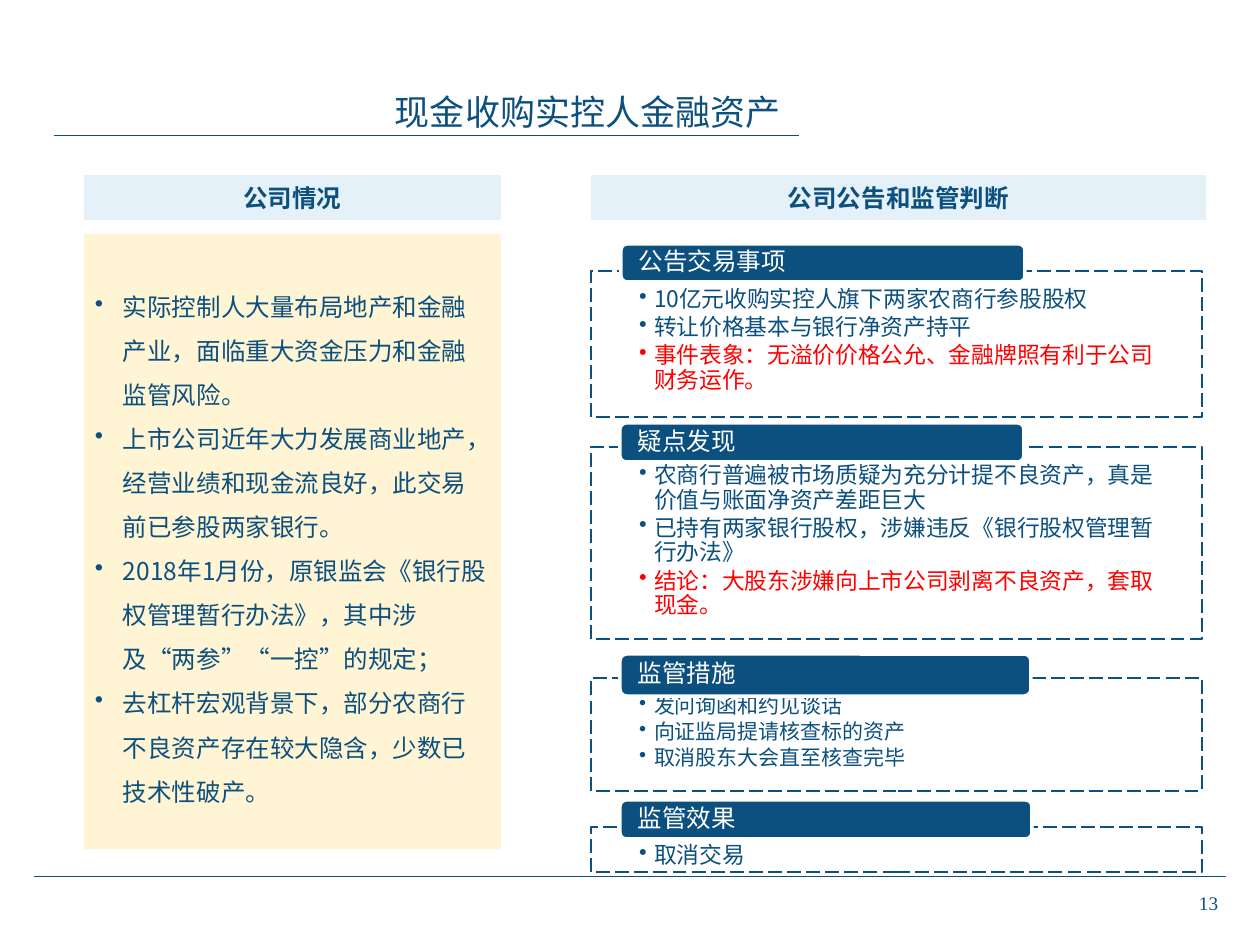
from lxml import etree
from pptx import Presentation, util as u
from pptx.dml.color import RGBColor
from pptx.enum import dml, shapes, text
from pptx.oxml import ns

SCALE = u.Inches(10) / 1260
NAVY = RGBColor(0x0C, 0x50, 0x7F)
RED = RGBColor(0xFF, 0, 0)
WHITE = RGBColor(0xFF, 0xFF, 0xFF)
PALE_BLUE = RGBColor(0xE5, 0xF1, 0xF9)
CREAM = RGBColor(0xFF, 0xF4, 0xD3)
CJK = "Noto Sans CJK SC"
SERIF = "Times New Roman"

COMPANY_FACTS = [
    "实际控制人大量布局地产和金融产业，面临重大资金压力和金融监管风险。",
    "上市公司近年大力发展商业地产，经营业绩和现金流良好，此交易前已参股两家银行。",
    "2018年1月份，原银监会《银行股权管理暂行办法》，其中涉及“两参”“一控”的规定；",
    "去杠杆宏观背景下，部分农商行不良资产存在较大隐含，少数已技术性破产。",
]
SECTIONS = [
    ("公告交易事项", (621, 244, 404, 38), (591, 271, 611, 146), 13, [
        ("10亿元收购实控人旗下两家农商行参股股权", NAVY),
        ("转让价格基本与银行净资产持平", NAVY),
        ("事件表象：无溢价价格公允、金融牌照有利于公司财务运作。", RED)]),
    ("疑点发现", (620, 423, 404, 39), (591, 447, 611, 192), 13, [
        ("农商行普遍被市场质疑为充分计提不良资产，真是价值与账面净资产差距巨大", NAVY),
        ("已持有两家银行股权，涉嫌违反《银行股权管理暂行办法》", NAVY),
        ("结论：大股东涉嫌向上市公司剥离不良资产，套取现金。", RED)]),
    ("监管措施", (620, 654, 411, 42), (591, 678, 611, 113), 12, [
        ("发问询函和约见谈话", NAVY),
        ("向证监局提请核查标的资产", NAVY),
        ("取消股东大会直至核查完毕", NAVY)]),
    ("监管效果", (620, 800, 412, 39), (591, 827, 611, 45), 13, [
        ("取消交易", NAVY)]),
]


def px(value):
    return u.Emu(round(value * SCALE))


def add_rule(slide, left, right, top):
    line = slide.shapes.add_connector(
        shapes.MSO_CONNECTOR.STRAIGHT, px(left), px(top), px(right), px(top))
    line.line.color.rgb = NAVY
    line.line.width = u.Pt(0.5)
    etree.SubElement(line._element.spPr, ns.qn("a:effectLst"))


def add_panel(slide, box, fill, kind=shapes.MSO_SHAPE.RECTANGLE):
    shape = slide.shapes.add_shape(kind, *map(px, box))
    shape.shadow.inherit = False
    shape.fill.solid()
    shape.fill.fore_color.rgb = fill
    shape.line.fill.background()
    return shape


def set_frame(frame, margins, anchor=text.MSO_ANCHOR.MIDDLE):
    frame.word_wrap = True
    frame.vertical_anchor = anchor
    (frame.margin_left, frame.margin_top,
     frame.margin_right, frame.margin_bottom) = map(px, margins)


def style_paragraph(paragraph, size, color, font=CJK, bold=False,
                    align=text.PP_ALIGN.LEFT):
    paragraph.alignment = align
    for run in paragraph.runs:
        run.font.name = font
        run.font.size = u.Pt(size)
        run.font.bold = bold
        run.font.color.rgb = color
        east_asian = etree.SubElement(run._r.get_or_add_rPr(), ns.qn("a:ea"))
        east_asian.set("typeface", font)


def fill_bullets(frame, items, size, indent, line_spacing, space_after=0):
    frame.text = "\n".join(words for words, color in items)
    for paragraph, (words, color) in zip(frame.paragraphs, items):
        properties = paragraph._p.get_or_add_pPr()
        properties.set("marL", str(px(indent)))
        properties.set("indent", str(-px(indent)))
        bullet = etree.SubElement(properties, ns.qn("a:buChar"))
        bullet.set("char", "•")
        paragraph.line_spacing = line_spacing
        paragraph.space_after = u.Pt(space_after)
        style_paragraph(paragraph, size, color)


def add_label(slide, box, words, size, font=CJK):
    frame = slide.shapes.add_textbox(*map(px, box)).text_frame
    set_frame(frame, (13, 6, 13, 6), text.MSO_ANCHOR.TOP)
    frame.text = words
    style_paragraph(frame.paragraphs[0], size, NAVY, font)


def add_heading(slide, box, words):
    frame = add_panel(slide, box, PALE_BLUE).text_frame
    set_frame(frame, (11, 5, 11, 5))
    frame.text = words
    style_paragraph(frame.paragraphs[0], 14, NAVY, bold=True,
                    align=text.PP_ALIGN.CENTER)


def add_company_column(slide, left, top, width):
    add_heading(slide, (left, top, width, 45), "公司情况")
    frame = add_panel(slide, (left, top + 59, width, 615), CREAM).text_frame
    set_frame(frame, (11, 5, 11, 5))
    fill_bullets(frame, [(fact, NAVY) for fact in COMPANY_FACTS], 14, 28, 1.5)


def add_section(slide, title, tag_box, body_box, size, items):
    body = add_panel(slide, body_box, WHITE)
    body.line.color.rgb = NAVY
    body.line.width = u.Pt(1)
    body.line.dash_style = dml.MSO_LINE.LONG_DASH
    set_frame(body.text_frame, (48, 17, 48, 12), text.MSO_ANCHOR.TOP)
    fill_bullets(body.text_frame, items, size, 15, 0.9, 2)

    tag = add_panel(slide, tag_box, NAVY, shapes.MSO_SHAPE.ROUNDED_RECTANGLE)
    tag.adjustments[0] = 0.16
    tag.line.color.rgb = WHITE
    tag.line.width = u.Pt(2)
    set_frame(tag.text_frame, (16, 0, 16, 0))
    tag.text_frame.text = title
    tag.text_frame.paragraphs[0].line_spacing = 0.9
    style_paragraph(tag.text_frame.paragraphs[0], 14, WHITE)


def add_review_column(slide, left, top, width):
    for section in SECTIONS:
        add_section(slide, *section)
    add_heading(slide, (left, top, width, 45), "公司公告和监管判断")


def main():
    presentation = Presentation()
    presentation.slide_width = px(1260)
    presentation.slide_height = px(945)
    slide = presentation.slides.add_slide(presentation.slide_layouts[6])
    add_rule(slide, 34, 1226, 876)
    add_rule(slide, 54, 799, 135)
    add_label(slide, (382, 84, 745, 55), "现金收购实控人金融资产", 20)
    add_company_column(slide, 84, 175, 417)
    add_review_column(slide, 591, 175, 615)
    add_label(slide, (1186, 885, 59, 37), "13", 11, SERIF)
    presentation.save("out.pptx")


if __name__ == "__main__":
    main()
